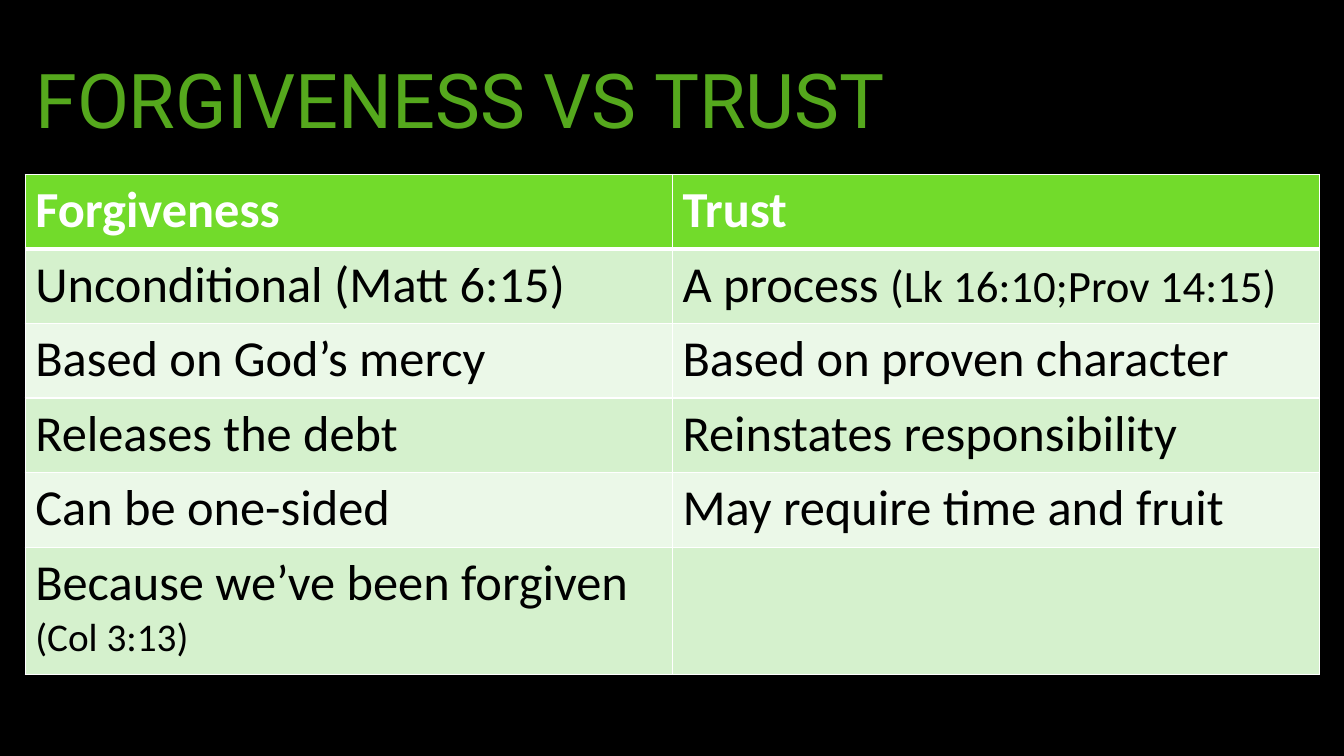
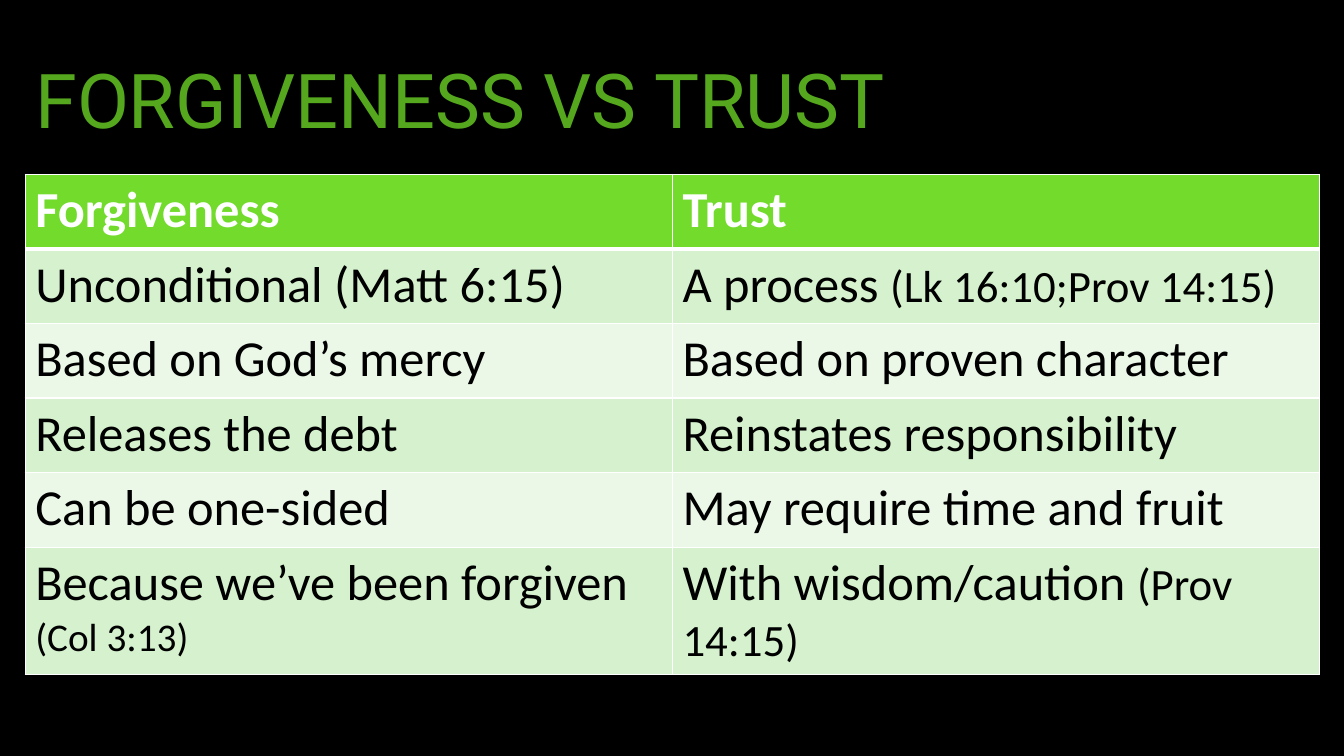
from lxml import etree
from pptx import Presentation
from pptx.dml.color import RGBColor
from pptx.enum.text import MSO_ANCHOR, PP_ALIGN
from pptx.oxml.ns import qn
from pptx.util import Inches, Pt

LEFT = PP_ALIGN.LEFT
MIDDLE = MSO_ANCHOR.MIDDLE

BLACK = RGBColor(0x00, 0x00, 0x00)
WHITE = RGBColor(0xFF, 0xFF, 0xFF)
TITLE_GREEN = RGBColor(0x55, 0xA8, 0x1D)
HEADER_GREEN = RGBColor(0x72, 0xDB, 0x2B)
BAND_GREENS = (RGBColor(0xEB, 0xF8, 0xE8), RGBColor(0xD5, 0xF1, 0xCD))

TITLE_FONT = "Roboto"
TABLE_FONT = "Calibri"
TITLE_ONLY = 5
TITLE_BOX = (0.25, 0.22, 12.9, 1.62)
TABLE_BOX = (0.25, 1.73, 12.84, 4.96)
ROW_HEIGHT = 0.74

# Each cell is a main phrase and, where it has one, a smaller reference with its size
HEADER = [("Forgiveness",), ("Trust",)]
CONTRASTS = [
    [("Unconditional (Matt 6:15)",), ("A process ", "(Lk 16:10;Prov 14:15)", 32)],
    [("Based on God’s mercy",), ("Based on proven character",)],
    [("Releases the debt",), ("Reinstates responsibility",)],
    [("Can be one-sided",), ("May require time and fruit",)],
]
FORGIVEN = ("Because we’ve been forgiven ", "(Col 3:13)", 28)
WISDOM = ("With wisdom/caution ", "(Prov 14:15)", 32)


def set_borders(cell, top, bottom):
    """Draw white cell borders; top and bottom are widths in points."""
    properties = cell._tc.get_or_add_tcPr()
    sides = (("lnL", 1), ("lnR", 1), ("lnT", top), ("lnB", bottom))
    for position, (side, width) in enumerate(sides):
        line = etree.Element(qn("a:" + side), w=str(Pt(width)))
        fill = etree.SubElement(line, qn("a:solidFill"))
        etree.SubElement(fill, qn("a:srgbClr"), val=str(WHITE))
        properties.insert(position, line)


def add_title(slide, box, text):
    title = slide.shapes.title
    title.left, title.top, title.width, title.height = map(Inches, box)
    title.text_frame.text = text
    title.text_frame.word_wrap = True
    title.text_frame.vertical_anchor = MIDDLE
    paragraph = title.text_frame.paragraphs[0]
    paragraph.alignment = LEFT
    paragraph.line_spacing = 0.9
    paragraph.font.name = TITLE_FONT
    paragraph.font.size = Pt(54)
    paragraph.font.color.rgb = TITLE_GREEN


def fill_cell(cell, content, is_header, background):
    cell.fill.solid()
    cell.fill.fore_color.rgb = background
    paragraph = cell.text_frame.paragraphs[0]
    paragraph.font.name = TABLE_FONT
    paragraph.font.size = Pt(36)
    paragraph.font.bold = is_header
    paragraph.font.color.rgb = WHITE if is_header else BLACK
    if content:
        phrase, *reference = content
        paragraph.add_run().text = phrase
        if reference:
            run = paragraph.add_run()
            run.text, size = reference
            run.font.size = Pt(size)


def add_comparison(slide, box, rows):
    left, top, width, height = box
    columns = len(rows[0])
    table = slide.shapes.add_table(len(rows), columns, *map(Inches, box)).table
    for column in table.columns:
        column.width = Inches(width / columns)
    # The last row takes the height that is left
    for row in table.rows:
        row.height = Inches(ROW_HEIGHT)
    table.rows[len(rows) - 1].height = Inches(height - ROW_HEIGHT * (len(rows) - 1))

    for r, contents in enumerate(rows):
        background = BAND_GREENS[r % 2] if r else HEADER_GREEN
        for c, content in enumerate(contents):
            cell = table.cell(r, c)
            fill_cell(cell, content, r == 0, background)
            set_borders(cell, top=3 if r == 1 else 1, bottom=3 if r == 0 else 1)


def add_comparison_slide(prs, last_trust_point):
    slide = prs.slides.add_slide(prs.slide_layouts[TITLE_ONLY])
    add_title(slide, TITLE_BOX, "FORGIVENESS VS TRUST")
    add_comparison(slide, TABLE_BOX, [HEADER, *CONTRASTS, [FORGIVEN, last_trust_point]])


def main():
    prs = Presentation()
    prs.slide_width, prs.slide_height = Inches(13.33), Inches(7.5)
    # Shared black background
    background = prs.slide_master.background.fill
    background.solid()
    background.fore_color.rgb = BLACK
    # The second slide reveals the last point on trust
    for last_trust_point in (None, WISDOM):
        add_comparison_slide(prs, last_trust_point)
    prs.save("out.pptx")


if __name__ == "__main__":
    main()
